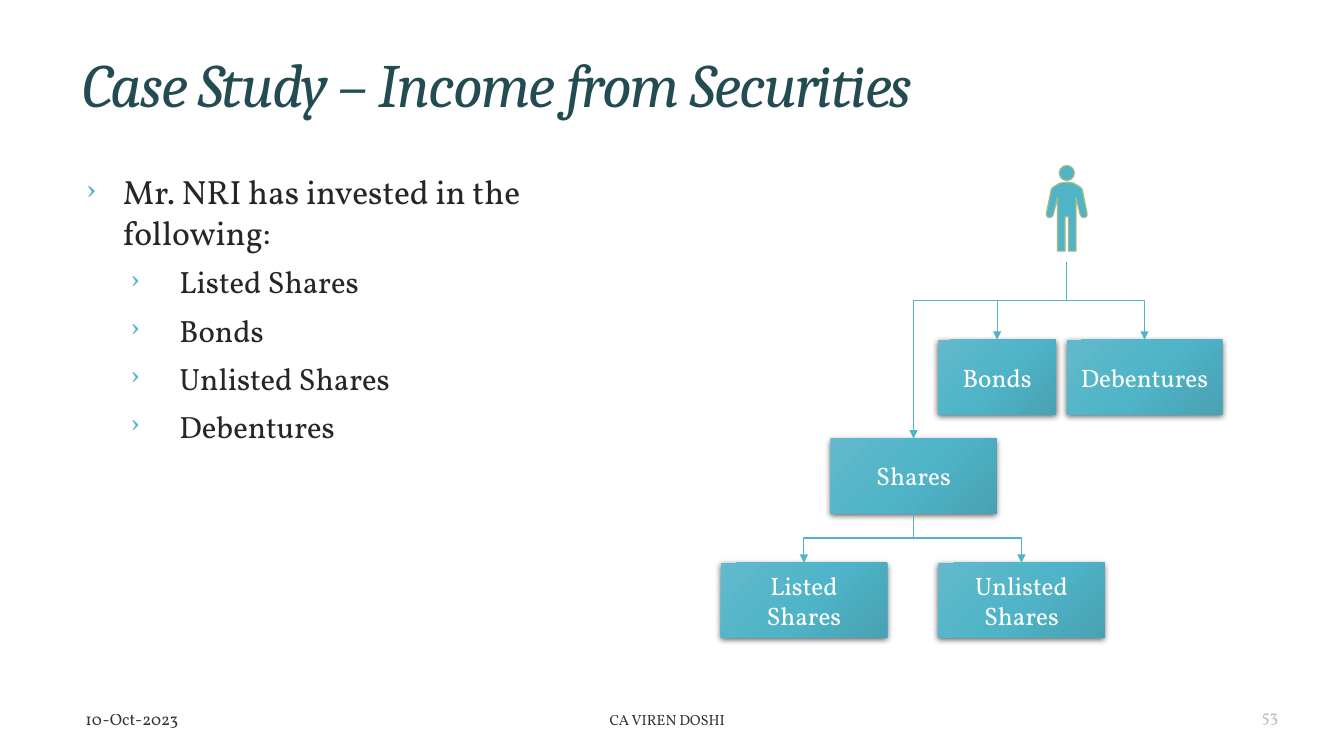
from copy import deepcopy
from dataclasses import dataclass

from lxml.etree import SubElement
from pptx import Presentation
from pptx.dml.color import RGBColor
from pptx.enum.shapes import MSO_CONNECTOR, MSO_SHAPE
from pptx.enum.text import MSO_ANCHOR, MSO_AUTO_SIZE, PP_ALIGN
from pptx.oxml.ns import qn
from pptx.slide import Slide
from pptx.util import Emu, Inches, Pt

# The slide is a grid of 160 columns by 90 rows of square cells
SLIDE_WIDTH, SLIDE_HEIGHT = Inches(13.333), Inches(7.5)
CELL = SLIDE_HEIGHT / 90

TEAL = RGBColor(0x50, 0xB4, 0xC8)
TEAL_LIGHT = RGBColor(0x61, 0xB9, 0xCB)
TEAL_DARK = RGBColor(0x48, 0xA2, 0xB4)
TITLE_GREEN = RGBColor(0x23, 0x4B, 0x52)
OLIVE = RGBColor(0xA8, 0xB9, 0x7F)
INK = RGBColor(0x26, 0x26, 0x26)
BLACK = RGBColor(0, 0, 0)
WHITE = RGBColor(0xFF, 0xFF, 0xFF)

HEADING_FONT, TEXT_FONT = "Cambria", "Vollkorn"
BOX_HEIGHT = 8.9


@dataclass(frozen=True)
class Area:
    left: float
    top: float
    width: float
    height: float = BOX_HEIGHT

    @property
    def centre(self) -> float:
        return self.left + self.width / 2

    @property
    def bottom(self) -> float:
        return self.top + self.height

    def emu(self) -> tuple[Emu, ...]:
        return tuple(map(cells, (self.left, self.top, self.width, self.height)))


@dataclass(frozen=True)
class Node:
    label: str
    area: Area


@dataclass(frozen=True)
class FooterPart:
    text: str
    area: Area
    size: float
    opacity: int
    align: PP_ALIGN
    anchor: MSO_ANCHOR


TITLE_AREA = Area(8.64, 2.88, 141.36, 15.24)
LIST_AREA = Area(8.88, 19.8, 71.16, 56.04)
HOLDINGS = ["Listed Shares", "Bonds", "Unlisted Shares", "Debentures"]

BONDS = Node("Bonds", Area(111.7, 40.44, 14))
DEBENTURES = Node("Debentures", Area(127, 40.44, 18.5))
UNLISTED = Node("Unlisted Shares", Area(111.7, 67, 19.8))
LISTED = Node("Listed Shares", Area(85.8, 67, 19.8))
SHARES = Node("Shares", Area(98.85, 52.2, 19.8))

INVESTOR_X, INVESTOR_FOOT = 127, 31.2
HEAD = Area(INVESTOR_X - 0.9, 19.7, 1.8, 1.8)
# Right half of the body: offset from the centre, row
HALF_BODY = [(0, 21.7), (0.8, 21.8), (1.3, 22.1), (1.7, 22.35), (1.85, 22.6),
             (2.4, 25.3), (2.42, 25.6), (2.3, 25.85), (2, 25.9), (1.75, 25.8),
             (1.6, 25.55), (1.1, 23.5), (1.1, 29.9), (0.2, 29.9), (0.2, 25.8)]

FOOTER = [
    FooterPart("10-Oct-2023", Area(9, 84.12, 54, 3), 12, 80,
               PP_ALIGN.LEFT, MSO_ANCHOR.MIDDLE),
    FooterPart("CA VIREN DOSHI", Area(46.44, 84.12, 66, 3), 10.5, 80,
               PP_ALIGN.CENTER, MSO_ANCHOR.MIDDLE),
    FooterPart("53", Area(116.4, 84.12, 36.96, 2.88), 12, 25,
               PP_ALIGN.RIGHT, MSO_ANCHOR.BOTTOM),
]


def cells(count: float) -> Emu:
    return Emu(round(count * CELL))


def style(run, size: float, colour: RGBColor, font: str = TEXT_FONT) -> None:
    run.font.size, run.font.name = Pt(size), font
    run.font.color.rgb = colour


def place(shape, area: Area) -> None:
    shape.left, shape.top, shape.width, shape.height = area.emu()


def add_title(slide: Slide, text: str) -> None:
    title = slide.shapes.title
    place(title, TITLE_AREA)
    frame = title.text_frame
    frame.text = text
    frame.auto_size, frame.vertical_anchor = MSO_AUTO_SIZE.NONE, MSO_ANCHOR.MIDDLE
    heading = frame.paragraphs[0]
    heading.alignment, heading.line_spacing = PP_ALIGN.LEFT, 0.85
    run = heading.runs[0]
    style(run, 44, TITLE_GREEN, HEADING_FONT)
    run.font.italic = True
    run.font._element.set("spc", "-120")


def add_bullet(paragraph, margin: float, hanging: float) -> None:
    paragraph.space_before, paragraph.space_after = Pt(5), Pt(3)
    props = paragraph._p.get_or_add_pPr()
    props.set("marL", str(Inches(margin)))
    props.set("indent", str(-Inches(hanging)))
    colour = SubElement(props, qn("a:buClr"))
    SubElement(colour, qn("a:srgbClr"), val=str(TEAL))
    SubElement(props, qn("a:buFont"), typeface=TEXT_FONT)
    SubElement(props, qn("a:buChar"), char="›")


def add_list(slide: Slide, intro: str, items: list[str]) -> None:
    body = slide.placeholders[1]
    place(body, LIST_AREA)
    frame = body.text_frame
    frame.text = "\n".join([intro, *items])
    frame.auto_size = MSO_AUTO_SIZE.NONE
    for index, paragraph in enumerate(frame.paragraphs):
        paragraph.level = min(index, 1)
        add_bullet(paragraph, *((0.94, 0.5) if index else (0.38, 0.38)))
        style(paragraph.runs[0], 22 if index else 24, INK)


def add_footer(slide: Slide, part: FooterPart) -> None:
    frame = slide.shapes.add_textbox(*part.area.emu()).text_frame
    frame.word_wrap, frame.vertical_anchor = True, part.anchor
    frame.text = part.text
    paragraph = frame.paragraphs[0]
    paragraph.alignment = part.align
    style(paragraph.runs[0], part.size, BLACK)
    colour = paragraph.runs[0].font._element.find(".//" + qn("a:srgbClr"))
    SubElement(colour, qn("a:alpha"), val=str(part.opacity * 1000))


def add_node(slide: Slide, node: Node) -> None:
    box = slide.shapes.add_shape(MSO_SHAPE.RECTANGLE, *node.area.emu())
    box.line.fill.background()
    # Three-stop diagonal gradient
    box.fill.gradient()
    box.fill.gradient_angle = 315
    stops = box.element.find(".//" + qn("a:gsLst"))
    stops.append(deepcopy(stops[0]))
    shades = (TEAL_LIGHT, TEAL, TEAL_DARK)
    for stop, shade, position in zip(box.fill.gradient_stops, shades, (0, 0.5, 1)):
        stop.color.rgb, stop.position = shade, position
    # Soft shadow below
    box.shadow.inherit = False
    shadow = SubElement(box.element.spPr.find(qn("a:effectLst")), qn("a:outerShdw"),
                        blurRad=str(Pt(4.5)), dist=str(Pt(1.5)), dir="5400000",
                        rotWithShape="0")
    colour = SubElement(shadow, qn("a:srgbClr"), val=str(BLACK))
    SubElement(colour, qn("a:alpha"), val="63000")
    # Label
    frame = box.text_frame
    frame.word_wrap, frame.vertical_anchor = True, MSO_ANCHOR.MIDDLE
    frame.margin_left = frame.margin_right = cells(1.4)
    frame.text = node.label
    frame.paragraphs[0].alignment = PP_ALIGN.CENTER
    style(frame.paragraphs[0].runs[0], 18, WHITE)


def add_branch(slide: Slide, x: float, y: float, child: Node, drop: float) -> None:
    """Elbow arrow that falls by drop, runs sideways and falls onto the child."""
    across, down = child.area.centre - x, child.area.top - y
    middle_x, middle_y = x + across / 2, y + down / 2
    # Drawn lying down, then turned upright; rightward branches are flipped
    reach = -down / 2 if across > 0 else down / 2
    rise = abs(across) / 2
    branch = slide.shapes.add_connector(
        MSO_CONNECTOR.ELBOW, cells(middle_x - reach), cells(middle_y - rise),
        cells(middle_x + reach), cells(middle_y + rise))
    branch.line.color.rgb, branch.line.width = TEAL, Pt(0.75)
    props = branch.element.spPr
    props.find(qn("a:xfrm")).set("rot", "16200000" if across > 0 else "5400000")
    SubElement(props.find(".//" + qn("a:avLst")), qn("a:gd"), name="adj1",
               fmla=f"val {round(drop / down * 100000)}")
    SubElement(props.find(qn("a:ln")), qn("a:tailEnd"), type="triangle")
    SubElement(props, qn("a:effectLst"))


def add_investor(slide: Slide) -> None:
    head = slide.shapes.add_shape(MSO_SHAPE.OVAL, *HEAD.emu())
    mirrored = [(-offset, row) for offset, row in reversed(HALF_BODY[1:])]
    outline = [(cells(INVESTOR_X + offset), cells(row))
               for offset, row in HALF_BODY + mirrored]
    builder = slide.shapes.build_freeform(*outline[0])
    builder.add_line_segments(outline[1:], close=True)
    for part in (head, builder.convert_to_shape()):
        part.shadow.inherit = False
        part.fill.solid()
        part.fill.fore_color.rgb = TEAL
        part.line.color.rgb, part.line.width = OLIVE, Pt(0.86)


def main() -> None:
    deck = Presentation()
    deck.slide_width, deck.slide_height = SLIDE_WIDTH, SLIDE_HEIGHT
    slide = deck.slides.add_slide(deck.slide_layouts[1])
    add_title(slide, "Case Study – Income from Securities")
    add_list(slide, "Mr. NRI has invested in the following:", HOLDINGS)
    for part in FOOTER:
        add_footer(slide, part)
    # Ownership tree
    for node in (BONDS, DEBENTURES, UNLISTED, LISTED, SHARES):
        add_node(slide, node)
    add_investor(slide)
    for child in (BONDS, DEBENTURES, SHARES):
        add_branch(slide, INVESTOR_X, INVESTOR_FOOT, child, 4.62)
    for child in (LISTED, UNLISTED):
        add_branch(slide, SHARES.area.centre, SHARES.area.bottom, child, 2.95)
    deck.save("out.pptx")


if __name__ == "__main__":
    main()
